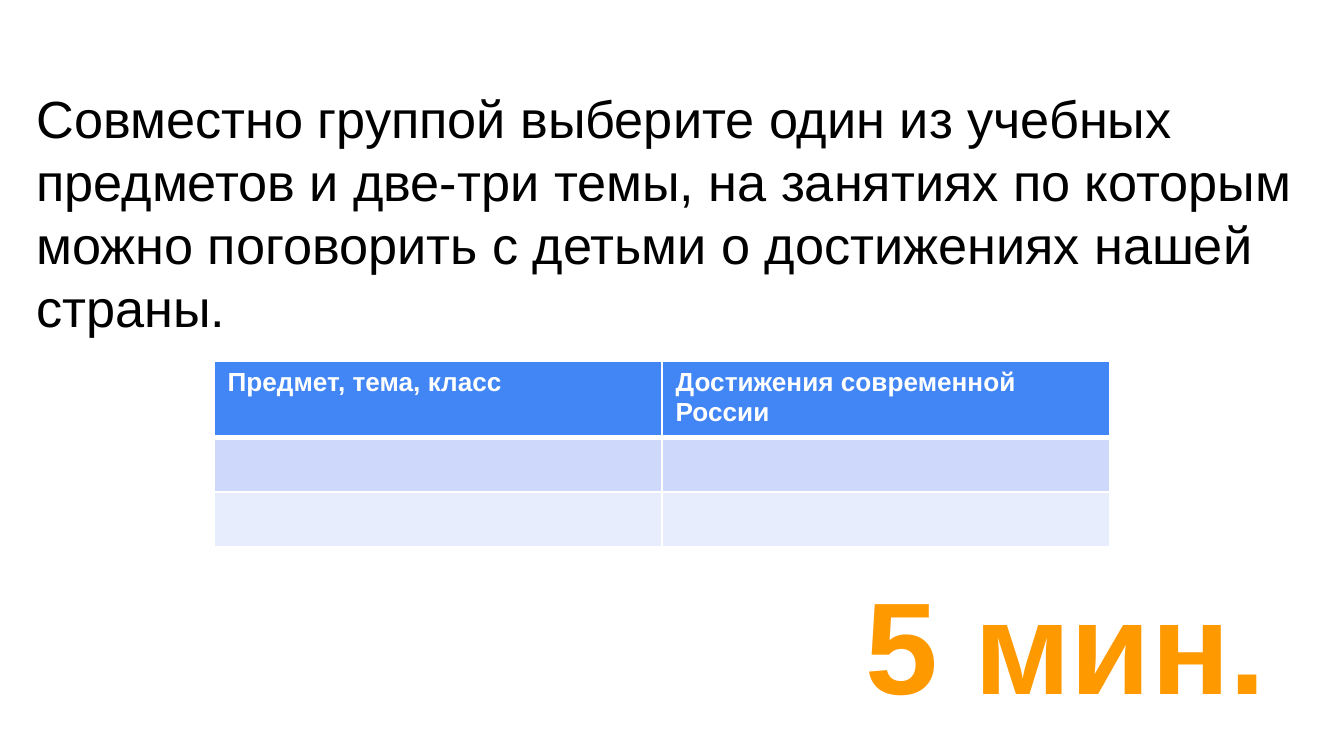
from lxml import etree
from pptx import Presentation
from pptx.dml.color import RGBColor
from pptx.enum.text import MSO_ANCHOR, PP_ALIGN
from pptx.oxml.ns import qn
from pptx.util import Emu, Pt

PX = 9525
FONT = "Arial"
LEFT, CENTER = PP_ALIGN.LEFT, PP_ALIGN.CENTER
TOP = MSO_ANCHOR.TOP
COLORS = {
    "text": "000000",
    "timer": "FF9900",
    "white": "FFFFFF",
    "header": "4285F4",
    "odd_row": "CDD8FB",
    "even_row": "E8EDFD",
}
HEADERS = ["Предмет, тема, класс", "Достижения современной России"]
TASK = (
    "Совместно группой выберите один из учебных предметов и две-три темы, "
    "на занятиях по которым можно поговорить с детьми о достижениях нашей страны."
)


def px(value):
    return Emu(value * PX)


def color(name):
    return RGBColor.from_string(COLORS[name])


def add_run(paragraph, text, size, color_name, bold=False):
    run = paragraph.add_run()
    run.text = text
    run.font.name = FONT
    run.font.size = Pt(size)
    run.font.bold = bold
    run.font.color.rgb = color(color_name)


def add_text(slide, box, text, size, color_name, bold=False,
             align=LEFT, top_inset=5):
    shape = slide.shapes.add_textbox(*map(px, box))
    frame = shape.text_frame
    frame.word_wrap = True
    frame.vertical_anchor = TOP
    frame.margin_left = frame.margin_right = px(10)
    frame.margin_top = frame.margin_bottom = px(top_inset)
    paragraph = frame.paragraphs[0]
    paragraph.alignment = align
    add_run(paragraph, text, size, color_name, bold)


def set_borders(cell, bottom_width):
    properties = cell._tc.get_or_add_tcPr()
    widths = {"lnL": 1, "lnR": 1, "lnT": 1, "lnB": bottom_width}
    for position, (tag, width) in enumerate(widths.items()):
        line = etree.Element(qn(f"a:{tag}"), w=str(Pt(width)))
        fill = etree.SubElement(line, qn("a:solidFill"))
        etree.SubElement(fill, qn("a:srgbClr"), val=COLORS["white"])
        properties.insert(position, line)


def add_answer_table(slide, box):
    row_fills = ["header", "odd_row", "even_row"]
    frame = slide.shapes.add_table(len(row_fills), len(HEADERS), *map(px, box))
    table = frame.table
    for row, fill_name in zip(table.rows, row_fills):
        is_header = fill_name == "header"
        row.height = px(39)
        for cell, header in zip(row.cells, HEADERS):
            cell.fill.solid()
            cell.fill.fore_color.rgb = color(fill_name)
            set_borders(cell, 3 if is_header else 1)
            if is_header:
                add_run(cell.text_frame.paragraphs[0], header, 14, "white", True)
    frame.height = px(box[3])


def main():
    presentation = Presentation()
    presentation.slide_width = px(960)
    presentation.slide_height = px(540)
    slide = presentation.slides.add_slide(presentation.slide_layouts[6])
    add_text(slide, (580, 393, 363, 132), "5 мин.", 70, "timer",
             bold=True, align=CENTER, top_inset=10)
    add_text(slide, (16, 57, 926, 213), TASK, 28, "text")
    add_answer_table(slide, (153, 258, 640, 132))
    presentation.save("out.pptx")


if __name__ == "__main__":
    main()
